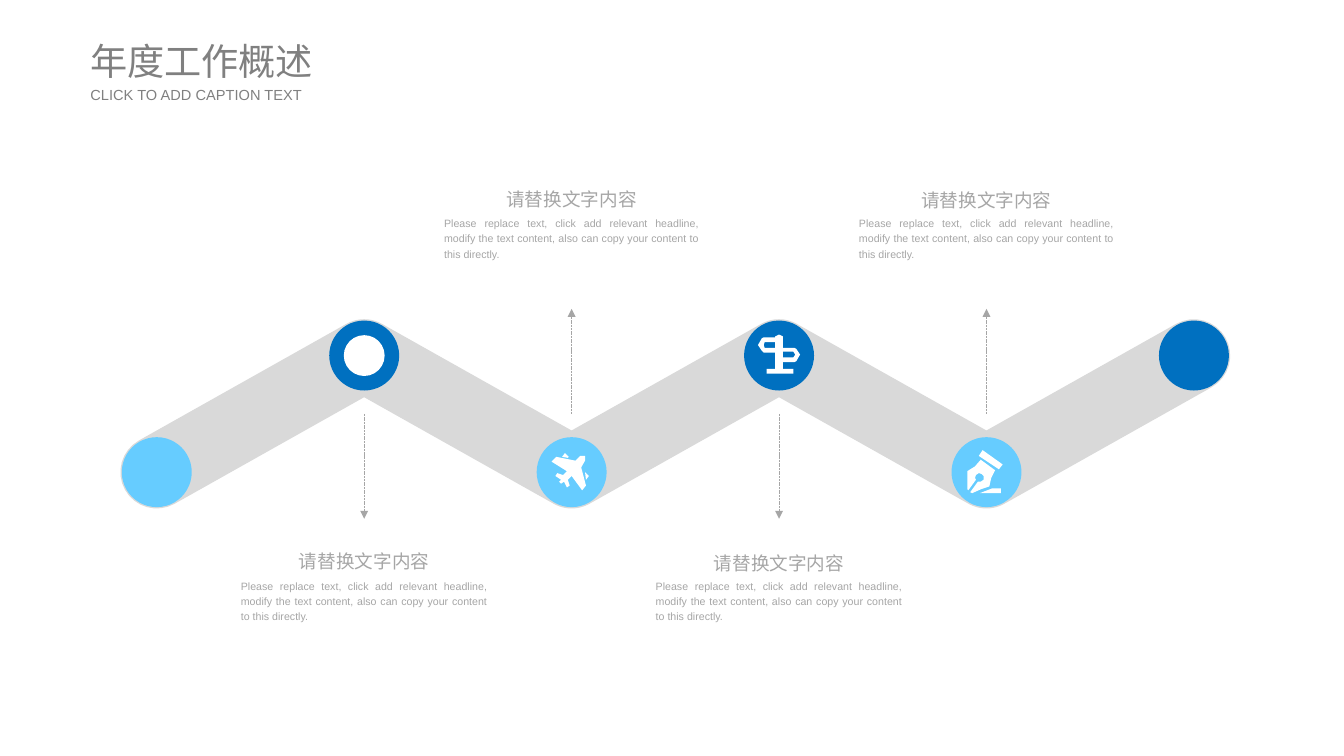
from math import atan2, cos, degrees, hypot, radians, sin

from lxml.etree import SubElement
from pptx import Presentation
from pptx.dml.color import RGBColor
from pptx.enum.dml import MSO_LINE
from pptx.enum.shapes import MSO_CONNECTOR as CONN, MSO_SHAPE as SHAPE
from pptx.enum.text import MSO_ANCHOR as ANCHOR, PP_ALIGN as ALIGN
from pptx.oxml.ns import qn
from pptx.util import Inches, Pt

BAND = RGBColor(0xD9, 0xD9, 0xD9)
SKY = RGBColor(0x66, 0xCC, 0xFF)
BLUE = RGBColor(0x00, 0x70, 0xC0)
WHITE = RGBColor(0xFF, 0xFF, 0xFF)
GREY = RGBColor(0xA6, 0xA6, 0xA6)
TITLE = RGBColor(0x80, 0x80, 0x80)

HEADING = "请替换文字内容"
BODY = ("Please replace text, click add relevant headline, modify the text "
        "content, also can copy your content to this directly.")

# Icon outlines, in hundredths of an inch from the centre of the circle
SIGNPOST = [
    [(-4, -14), (-15, -14), (-16, -11), (-15, -8), (-4, -8)],
    [(4, -8), (16, -8), (18, -7), (22, -1), (18, 6), (16, 7), (4, 7), (4, 14),
     (15, 14), (15, 19), (-13, 19), (-13, 14), (-4, 14), (-4, -3), (-16, -3),
     (-18, -5), (-22, -11), (-18, -18), (-16, -19), (-4, -19), (-4, -20),
     (0, -22), (4, -20)],
    [(15, -4), (4, -4), (4, 2), (15, 2), (17, -1)],
]
PLANE = [
    [(14, -17), (14, -12), (10, -5), (15, 14), (11, 19), (0, 4), (-4, 8),
     (-2, 14), (-5, 16), (-8, 10), (-11, 12), (-13, 10), (-11, 8), (-17, 4),
     (-15, 1), (-9, 3), (-5, -1), (-21, -11), (-16, -16), (4, -12), (9, -17)],
    [(18, 4), (14, 0), (15, 8)],
    [(-7, -20), (-10, -16), (-4, -15), (-3, -16)],
]
PEN = [
    [(-19, 19), (-20, 18), (-20, -1), (-12, -6), (-6, -13), (9, -2), (5, 6),
     (3, 15), (-6, 18), (-15, 22), (-17, 21), (-9, 10), (-6, 10), (-3, 8),
     (-3, 4), (-5, 2), (-8, 1), (-11, 3), (-12, 6), (-11, 8)],
    [(-7, 22), (15, 22), (15, 17), (6, 17)],
    [(13, -3), (17, -8), (-4, -23), (-8, -17)],
]


def arc(x, y, radius, start, end, steps=16):
    """Points on an arc, with angles in degrees counted from the right."""
    angles = [radians(start + (end - start) * i / steps) for i in range(steps + 1)]
    return [(x + radius * cos(t), y - radius * sin(t)) for t in angles]


def write(tf, text, size=14, color=GREY, align=ALIGN.LEFT, spacing=None):
    p = tf.paragraphs[0]
    p.alignment = align
    p.line_spacing = spacing
    r = p.add_run()
    r.text = text
    r.font.name = "Arial"
    r.font.size = Pt(size)
    r.font.color.rgb = color


class Canvas:
    """Column 0 and row 0 are the first joint and the level of the peaks."""
    LEFT, TOP, COL, ROW = 1.64, 3.72, 2.17, 1.22

    def __init__(self, slide):
        self.shapes = slide.shapes

    def at(self, col, row):
        return self.LEFT + col * self.COL, self.TOP + row * self.ROW

    def box(self, col, row, cols, rows):
        x, y = self.at(col, row)
        return [Inches(v) for v in (x, y, cols * self.COL, rows * self.ROW)]

    def paint(self, s, color):
        s.shadow.inherit = False
        s.fill.solid()
        s.fill.fore_color.rgb = color
        s.line.fill.background()

    def outline(self, contours, color):
        first, *rest = [[(Inches(x), Inches(y)) for x, y in c] for c in contours]
        builder = self.shapes.build_freeform(*first[0], scale=1.0)
        builder.add_line_segments(first[1:], close=True)
        for contour in rest:
            builder.move_to(*contour[0])
            builder.add_line_segments(contour[1:], close=True)
        self.paint(builder.convert_to_shape(), color)

    def zigzag(self, rows, half, color):
        """A band through joints that alternate between valley and peak."""
        joints = [self.at(col, row) for col, row in enumerate(rows)]
        tilt = degrees(atan2(self.ROW, self.COL))
        inner = half * hypot(self.COL, self.ROW) / self.COL
        upper, lower = [], []
        for i, (x, y) in list(enumerate(joints))[1:-1]:
            if rows[i] == 0:
                upper += arc(x, y, half, 90 + tilt, 90 - tilt)
                lower.append((x, y + inner))
            else:
                upper.append((x, y - inner))
                lower += arc(x, y, half, tilt - 90, -tilt - 90)[::-1]
        end = arc(*joints[-1], half, 90 + tilt, tilt - 90)
        start = arc(*joints[0], half, tilt - 90, tilt - 270)
        self.outline([upper + end + lower[::-1] + start], color)

    def circle(self, col, row, color, rows=0.6):
        x, y = self.at(col, row)
        size = rows * self.ROW
        s = self.shapes.add_shape(SHAPE.OVAL, Inches(x - size / 2),
                                  Inches(y - size / 2), Inches(size), Inches(size))
        self.paint(s, color)

    def icon(self, col, row, contours):
        x, y = self.at(col, row)
        self.outline([[(x + dx / 100, y + dy / 100) for dx, dy in c]
                      for c in contours], WHITE)

    def arrow(self, col, start, end):
        points = [Inches(v) for v in self.at(col, start) + self.at(col, end)]
        s = self.shapes.add_connector(CONN.STRAIGHT, *points)
        s.line.color.rgb = GREY
        s.line.width = Pt(0.5)
        s.line.dash_style = MSO_LINE.SQUARE_DOT
        SubElement(s.line._get_or_add_ln(), qn("a:tailEnd"), type="triangle")
        SubElement(s._element.spPr, qn("a:effectLst"))

    def text(self, col, row, cols, rows, text, wrap=True, flush=False, **style):
        tf = self.shapes.add_textbox(*self.box(col, row, cols, rows)).text_frame
        tf.word_wrap = wrap
        if flush:
            tf.margin_left = tf.margin_right = tf.margin_top = tf.margin_bottom = 0
            tf.vertical_anchor = ANCHOR.MIDDLE
        write(tf, text, **style)

    def caption(self, col, heading_row, body_row, cols):
        self.text(col - 0.365, heading_row, 0.73, 0.3, HEADING, wrap=False,
                  align=ALIGN.CENTER, spacing=1.2)
        self.text(col - cols / 2, body_row, cols, 0.47, BODY, size=8,
                  align=ALIGN.JUSTIFY, spacing=1.2)


def main():
    prs = Presentation()
    prs.slide_width, prs.slide_height = Inches(14.06), Inches(7.91)
    canvas = Canvas(prs.slides.add_slide(prs.slide_layouts[6]))

    # Zigzag road with a circle on each joint
    rows = [1, 0, 1, 0, 1, 0]
    canvas.zigzag(rows, 0.38, BAND)
    for col, row in enumerate(rows):
        canvas.circle(col, row, SKY if row else BLUE)

    # Plain disc on the first peak, icons on the next three joints
    canvas.circle(1, 0, WHITE, rows=0.35)
    for col, contours in enumerate([PLANE, SIGNPOST, PEN], start=2):
        canvas.icon(col, rows[col], contours)

    # Arrows and captions, below the peaks and above the valleys
    for col, heading_row in enumerate([1.59, -1.52, 1.61, -1.51], start=1):
        if rows[col] == 0:
            canvas.arrow(col, 0.5, 1.4)
            canvas.caption(col, heading_row, 1.86, 1.28)
        else:
            canvas.arrow(col, 0.5, -0.4)
            canvas.caption(col, heading_row, -1.25, 1.32)

    # Title
    canvas.text(-0.32, -2.73, 1.17, 0.4, "年度工作概述", flush=True,
                size=28, color=TITLE)
    canvas.text(-0.32, -2.32, 1.17, 0.16, "CLICK TO ADD CAPTION TEXT", flush=True,
                size=11, color=TITLE)

    prs.save("out.pptx")


if __name__ == "__main__":
    main()
